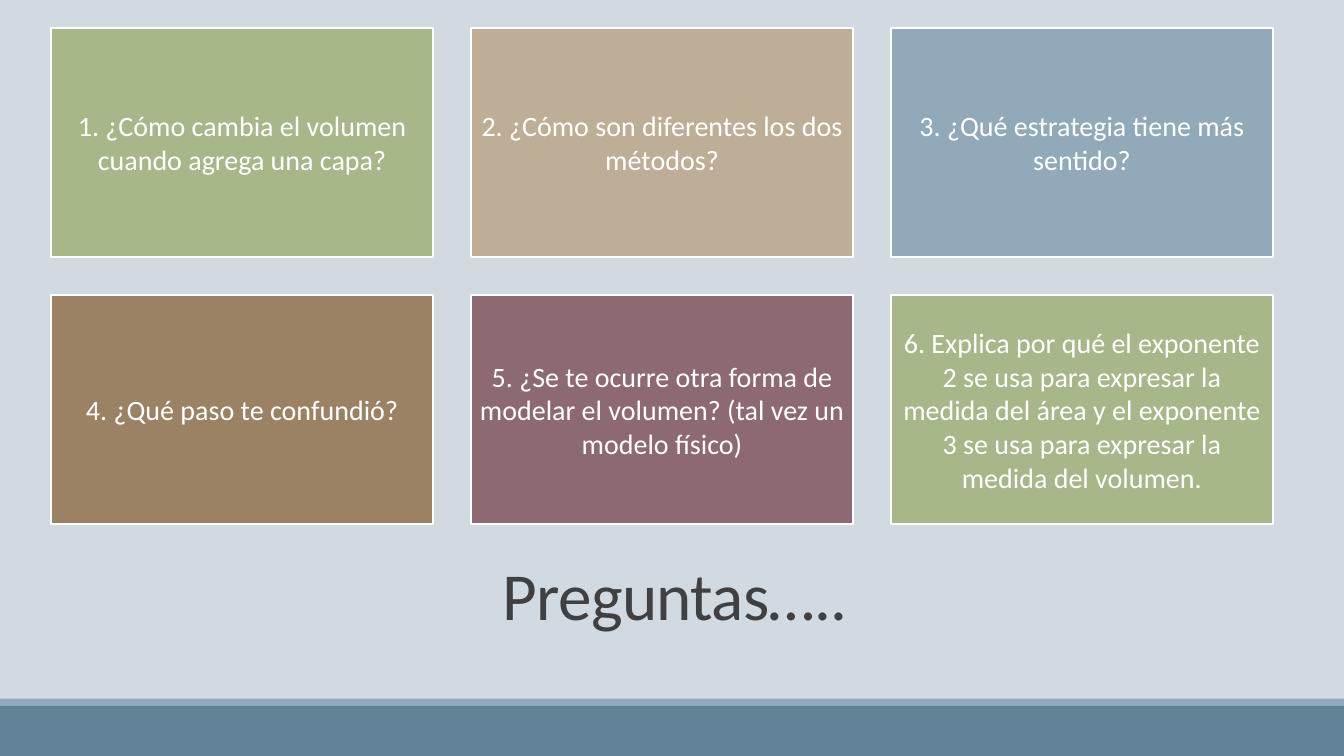
from dataclasses import dataclass

from pptx import Presentation
from pptx.dml.color import RGBColor
from pptx.enum.shapes import MSO_SHAPE as Shape
from pptx.enum.text import MSO_ANCHOR as Anchor, MSO_AUTO_SIZE as AutoSize, PP_ALIGN as Align
from pptx.util import Pt


@dataclass(frozen=True)
class Theme:
    font: str = "Calibri"
    background: str = "D1D9E1"
    ink: str = "404040"
    white: str = "FFFFFF"
    footer: str = "618197"
    footer_edge: str = "92A9B9"
    cards: tuple = ("A7B789", "BEAE98", "92A9B9", "9C8265", "8D6974")
    title_size: float = 48
    card_size: float = 20
    outline: float = 1.25


THEME = Theme()
WIDTH, HEIGHT = 960, 540
COLUMNS, GAP = 3, 27.2

QUESTIONS = [
    "1. ¿Cómo cambia el volumen cuando agrega una capa?",
    "2. ¿Cómo son diferentes los dos métodos?",
    "3. ¿Qué estrategia tiene más sentido?",
    "4. ¿Qué paso te confundió?",
    "5. ¿Se te ocurre otra forma de modelar el volumen? (tal vez un modelo físico)",
    "6. Explica por qué el exponente 2 se usa para expresar la medida del área "
    "y el exponente 3 se usa para expresar la medida del volumen.",
]


def write(shape, text, *, size, color, line_spacing=1.0, tracking=0, inset=None):
    """Put centred text into a shape."""
    frame = shape.text_frame
    frame.word_wrap = True
    frame.auto_size = AutoSize.NONE
    frame.vertical_anchor = Anchor.MIDDLE
    if inset is not None:
        frame.margin_left = frame.margin_right = Pt(inset)
        frame.margin_top = frame.margin_bottom = Pt(inset)
    para = frame.paragraphs[0]
    para.alignment = Align.CENTER
    para.line_spacing = line_spacing
    span = para.add_run()
    span.text = text
    span.font.name = THEME.font
    span.font.size = Pt(size)
    span.font.color.rgb = RGBColor.from_string(color)
    if tracking:
        span.font._element.set("spc", str(round(tracking * 100)))


def add_block(page, box, fill, outline=None):
    """Draw a plain rectangle, with an outline if a colour is given."""
    block = page.shapes.add_shape(Shape.RECTANGLE, *map(Pt, box))
    block.shadow.inherit = False
    block.fill.solid()
    block.fill.fore_color.rgb = RGBColor.from_string(fill)
    if outline:
        block.line.color.rgb = RGBColor.from_string(outline)
        block.line.width = Pt(THEME.outline)
    else:
        block.line.fill.background()
    return block


def add_footer(page, box):
    left, top, width, height = box
    edge = 5
    add_block(page, (left, top, width, edge), THEME.footer_edge)
    add_block(page, (left, top + edge, width, height - edge), THEME.footer)


def add_title(page, box):
    title = page.shapes.title
    title.left, title.top, title.width, title.height = map(Pt, box)
    write(title, "Preguntas…..", size=THEME.title_size, color=THEME.ink,
          line_spacing=0.85, tracking=-0.5)


def add_question_grid(page, box):
    left, top, width, height = box
    rows = len(QUESTIONS) // COLUMNS
    card_width = (width - GAP * (COLUMNS - 1)) / COLUMNS
    card_height = (height - GAP * (rows - 1)) / rows
    for index, question in enumerate(QUESTIONS):
        row, column = divmod(index, COLUMNS)
        card_box = (left + column * (card_width + GAP),
                    top + row * (card_height + GAP), card_width, card_height)
        fill = THEME.cards[index % len(THEME.cards)]
        card = add_block(page, card_box, fill, THEME.white)
        write(card, question, size=THEME.card_size, color=THEME.white, inset=6)


def build_questions_slide(deck):
    page = deck.slides.add_slide(deck.slide_layouts.get_by_name("Title Only"))
    page.background.fill.solid()
    page.background.fill.fore_color.rgb = RGBColor.from_string(THEME.background)
    # Footer band
    add_footer(page, (0, 499, WIDTH, HEIGHT - 499))
    # Question cards
    add_question_grid(page, (36.6, 20, 872.6, 354.4))
    # Title below the cards
    add_title(page, (86.4, 381.6, 792, 93.6))


def main():
    deck = Presentation()
    deck.slide_width, deck.slide_height = Pt(WIDTH), Pt(HEIGHT)
    build_questions_slide(deck)
    deck.save("out.pptx")


if __name__ == "__main__":
    main()
